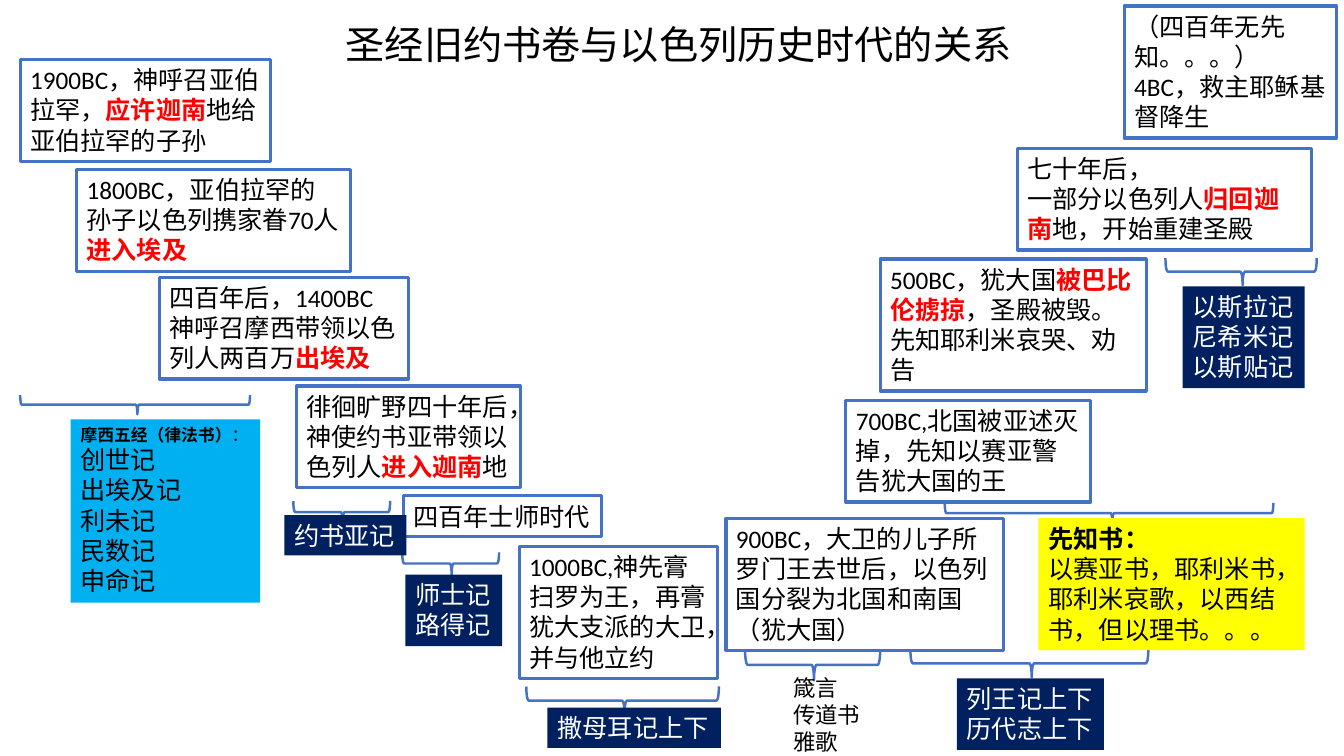
from lxml import etree
from pptx import Presentation
from pptx import util as u
from pptx.dml.color import RGBColor
from pptx.enum import shapes, text
from pptx.oxml.ns import qn

PX = 9144
LATIN, CJK = "Calibri", "Noto Sans CJK SC"
COLORS = {
    "line": "4472C4", "black": "000000", "white": "FFFFFF", "red": "FF0000",
    "navy": "002060", "cyan": "00B0F0", "yellow": "FFFF00",
}

TITLE = ((333, 15, 688, 88), "圣经旧约书卷与以色列历史时代的关系")

EVENTS = [
    ((20, 59, 248, 101), ["1900BC，神呼召亚伯拉罕，*应许迦南*地给亚伯拉罕的子孙"]),
    ((76, 168, 272, 101), ["1800BC，亚伯拉罕的孙子以色列携家眷70人*进入埃及*"]),
    ((158, 275, 247, 101), ["四百年后，1400BC", "神呼召摩西带领以色列人两百万*出埃及*"]),
    ((400, 492, 197, 40), ["四百年士师时代"]),
    ((294, 383, 222, 101), ["徘徊旷野四十年后，", "神使约书亚带领以色列人*进入迦南*地"]),
    ((839, 397, 243, 101), ["700BC,北国被亚述灭掉，先知以赛亚警告犹大国的王"]),
    ((720, 514, 275, 131), ["900BC，大卫的儿子所罗门王去世后，以色列国分裂为北国和南国（犹大国）"]),
    ((873, 257, 264, 131), ["500BC，犹大国*被巴比伦掳掠*，圣殿被毁。先知耶利米哀哭、劝告"]),
    ((1009, 147, 292, 101), ["七十年后，", "一部分以色列人*归回迦南*地，开始重建圣殿"]),
    ((1115, 6, 211, 131), ["（四百年无先知。。。）", "4BC，救主耶稣基督降生"]),
    ((515, 542, 197, 131), ["1000BC,神先膏扫罗为王，再膏犹大支派的大卫，并与他立约"]),
]

BRACES = [
    (20, 392, 228, 19), (291, 497, 96, 22), (399, 548, 96, 22), (522, 681, 191, 28),
    (903, 644, 236, 28), (739, 644, 134, 31), (937, 499, 326, 20), (1156, 256, 150, 27),
]

BOOKS = [
    ((70, 416, 188, 182), "cyan", "black", 18, ["创世记", "出埃及记", "利未记", "民数记", "申命记"],
     ("*摩西五经（律法书）*：", 12)),
    ((282, 511, 121, 40), "navy", "white", 18, ["约书亚记"], None),
    ((402, 570, 96, 71), "navy", "white", 18, ["师士记", "路得记"], None),
    ((543, 702, 172, 40), "navy", "white", 18, ["撒母耳记上下"], None),
    ((777, 664, 88, 91), None, "black", 16, ["箴言", "传道书", "雅歌"], None),
    ((949, 673, 146, 71), "navy", "white", 18, ["列王记上下", "历代志上下"], None),
    ((1173, 284, 121, 101), "navy", "white", 18, ["以斯拉记", "尼希米记", "以斯贴记"], None),
    ((1030, 514, 264, 131), "yellow", "black", 18,
     ["以赛亚书，耶利米书，", "耶利米哀歌，以西结书，但以理书。。。"], ("*先知书：*", 18)),
]


def rgb(name):
    return RGBColor.from_string(COLORS[name])


def emu(box):
    return [round(v * PX) for v in box]


def write(tf, lines, font, color, accent, wrap):
    tf.word_wrap = wrap
    for i, (line, size) in enumerate(lines):
        p = tf.add_paragraph() if i else tf.paragraphs[0]
        p.alignment = text.PP_ALIGN.LEFT
        p.font.size = u.Pt(size)
        p.font.color.rgb = rgb(color)
        p.font.name = font
        ea = etree.SubElement(p.font._element, qn("a:ea"))
        ea.set("typeface", CJK)
        for n, part in enumerate(line.split("*")):
            if part:
                r = p.add_run()
                r.text = part
                if n % 2:
                    r.font.bold = True
                    r.font.color.rgb = rgb(accent)


def add_event(s, box, lines):
    sp = s.shapes.add_textbox(*emu(box))
    sp.line.color.rgb = rgb("line")
    sp.line.width = u.Pt(2.25)
    write(sp.text_frame, [(t, 18) for t in lines], LATIN, "black", "red", True)


def add_brace(s, left, top, span, depth):
    x = left + (span - depth) / 2
    y = top + (depth - span) / 2
    sp = s.shapes.add_shape(shapes.MSO_SHAPE.LEFT_BRACE, *emu((x, y, depth, span)))
    sp.rotation = 270
    sp.adjustments[0] = 0.08
    sp.adjustments[1] = 0.51
    sp.shadow.inherit = False
    sp.fill.background()
    sp.line.color.rgb = rgb("line")
    sp.line.width = u.Pt(1.75)


def add_books(s, box, fill, color, size, names, heading):
    sp = s.shapes.add_textbox(*emu(box))
    if fill:
        sp.fill.solid()
        sp.fill.fore_color.rgb = rgb(fill)
    lines = ([heading] if heading else []) + [(t, size) for t in names]
    write(sp.text_frame, lines, CJK, color, color, fill == "yellow")


def main():
    prs = Presentation()
    prs.slide_width, prs.slide_height = emu((1333, 750))
    s = prs.slides.add_slide(prs.slide_layouts[5])
    box, heading = TITLE
    sp = s.shapes.title
    sp.left, sp.top, sp.width, sp.height = emu(box)
    sp.text_frame.vertical_anchor = text.MSO_ANCHOR.TOP
    write(sp.text_frame, [(heading, 28)], LATIN, "black", "black", False)
    for event in EVENTS:
        add_event(s, *event)
    for brace in BRACES:
        add_brace(s, *brace)
    for books in BOOKS:
        add_books(s, *books)
    prs.save("out.pptx")


if __name__ == "__main__":
    main()
